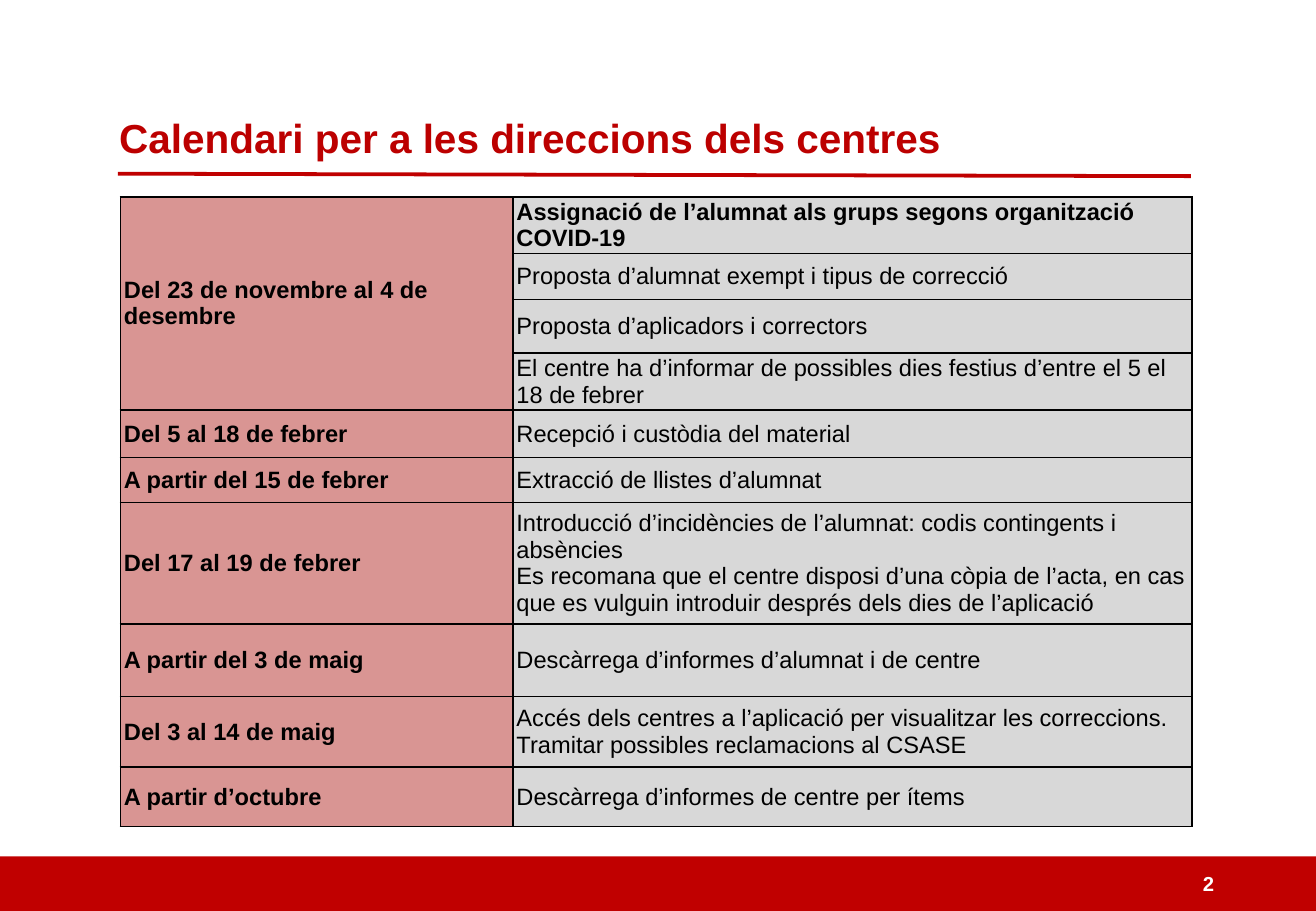
from dataclasses import dataclass

from lxml import etree
from pptx import Presentation
from pptx.dml.color import RGBColor
from pptx.enum.shapes import MSO_CONNECTOR, MSO_SHAPE
from pptx.enum.text import MSO_ANCHOR, PP_ALIGN
from pptx.oxml.ns import qn
from pptx.util import Inches, Pt

RECT = MSO_SHAPE.RECTANGLE
STRAIGHT = MSO_CONNECTOR.STRAIGHT
TOP, MIDDLE = MSO_ANCHOR.TOP, MSO_ANCHOR.MIDDLE
LEFT = PP_ALIGN.LEFT


@dataclass(frozen=True)
class Theme:
    font: str = "Arial"
    red: str = "C00000"
    title: str = "BC0000"
    date: str = "D99593"
    task: str = "D8D8D8"
    black: str = "000000"
    white: str = "FFFFFF"
    head: int = 24
    body: int = 14
    num: int = 12


T = Theme()


def write(frame, text, size, color, bold, anchor=MIDDLE):
    frame.text = text
    frame.vertical_anchor = anchor
    for para in frame.paragraphs:
        para.alignment = LEFT
        for run in para.runs:
            font = run.font
            font.name, font.size, font.bold = T.font, Pt(size), bold
            font.color.rgb = RGBColor.from_string(color)


def dress(cell, color):
    """Set the margins, the black borders and the fill of a cell."""
    cell.margin_left = cell.margin_right = Inches(0.03)
    cell.margin_top = cell.margin_bottom = 0
    props = cell._tc.get_or_add_tcPr()
    for side in ("a:lnL", "a:lnR", "a:lnT", "a:lnB"):
        line = etree.SubElement(props, qn(side), w=str(Pt(1)))
        fill = etree.SubElement(line, qn("a:solidFill"))
        etree.SubElement(fill, qn("a:srgbClr"), val=T.black)
    cell.fill.solid()
    cell.fill.fore_color.rgb = RGBColor.from_string(color)


deck = Presentation()
deck.slide_width, deck.slide_height = Inches(10.83), Inches(7.5)
slide = deck.slides.add_slide(deck.slide_layouts[5])
shapes = slide.shapes

# Footer band and title rule
band = shapes.add_shape(RECT, 0, Inches(7.05), deck.slide_width, Inches(0.45))
band.shadow.inherit = False
band.fill.solid()
band.fill.fore_color.rgb = RGBColor.from_string(T.red)
band.line.fill.background()

rule = shapes.add_connector(STRAIGHT, Inches(0.97), Inches(1.43), Inches(9.8), Inches(1.45))
rule.line.color.rgb = RGBColor.from_string(T.red)
rule.line.width = Pt(2.25)
etree.SubElement(rule._element.spPr, qn("a:effectLst"))

# Page number and title
page = shapes.add_textbox(Inches(9.8), Inches(7.11), Inches(0.91), Inches(0.33))
page.text_frame.word_wrap = True
write(page.text_frame, "2", T.num, T.white, True)

title = shapes.title
title.left, title.top = Inches(0.88), Inches(0.88)
title.width, title.height = Inches(7.01), Inches(0.5)
write(title.text_frame, "Calendari per a les direccions dels centres", T.head, T.title, True, TOP)

# Calendar: date, task, row height; an empty date joins the row above
rows = [
    ("Del 23 de novembre al 4 de desembre",
     "Assignació de l’alumnat als grups segons organització COVID-19", 0.46),
    ("", "Proposta d’alumnat exempt i tipus de correcció", 0.38),
    ("", "Proposta d’aplicadors i correctors", 0.44),
    ("", "El centre ha d’informar de possibles dies festius d’entre el 5 el 18 de febrer", 0.47),
    ("Del 5 al 18 de febrer", "Recepció i custòdia del material", 0.39),
    ("A partir del 15 de febrer", "Extracció de llistes d’alumnat", 0.37),
    ("Del 17 al 19 de febrer",
     "Introducció d’incidències de l’alumnat: codis contingents i absències\n"
     "Es recomana que el centre disposi d’una còpia de l’acta, "
     "en cas que es vulguin introduir després dels dies de l’aplicació", 1),
    ("A partir del 3 de maig", "Descàrrega d’informes d’alumnat i de centre", 0.6),
    ("Del 3 al 14 de maig",
     "Accés dels centres a l’aplicació per visualitzar les correccions.\n"
     "Tramitar possibles reclamacions al CSASE", 0.58),
    ("A partir d’octubre", "Descàrrega d’informes de centre per ítems", 0.49),
]
widths = (3.23, 5.59)
high = sum(row[2] for row in rows)
table = shapes.add_table(len(rows), 2, Inches(0.99), Inches(1.62),
                         Inches(sum(widths)), Inches(high)).table
table.first_row = table.horz_banding = False
for col, width in zip(table.columns, widths):
    col.width = Inches(width)

for i, (date, task, height) in enumerate(rows):
    table.rows[i].height = Inches(height)
    left, right = table.cell(i, 0), table.cell(i, 1)
    dress(left, T.date)
    dress(right, T.task)
    if date:
        write(left.text_frame, date, T.body, T.black, True)
    write(right.text_frame, task, T.body, T.black, i == 0)
    left.vertical_anchor = right.vertical_anchor = MIDDLE
table.cell(0, 0).merge(table.cell(3, 0))

deck.save("out.pptx")
